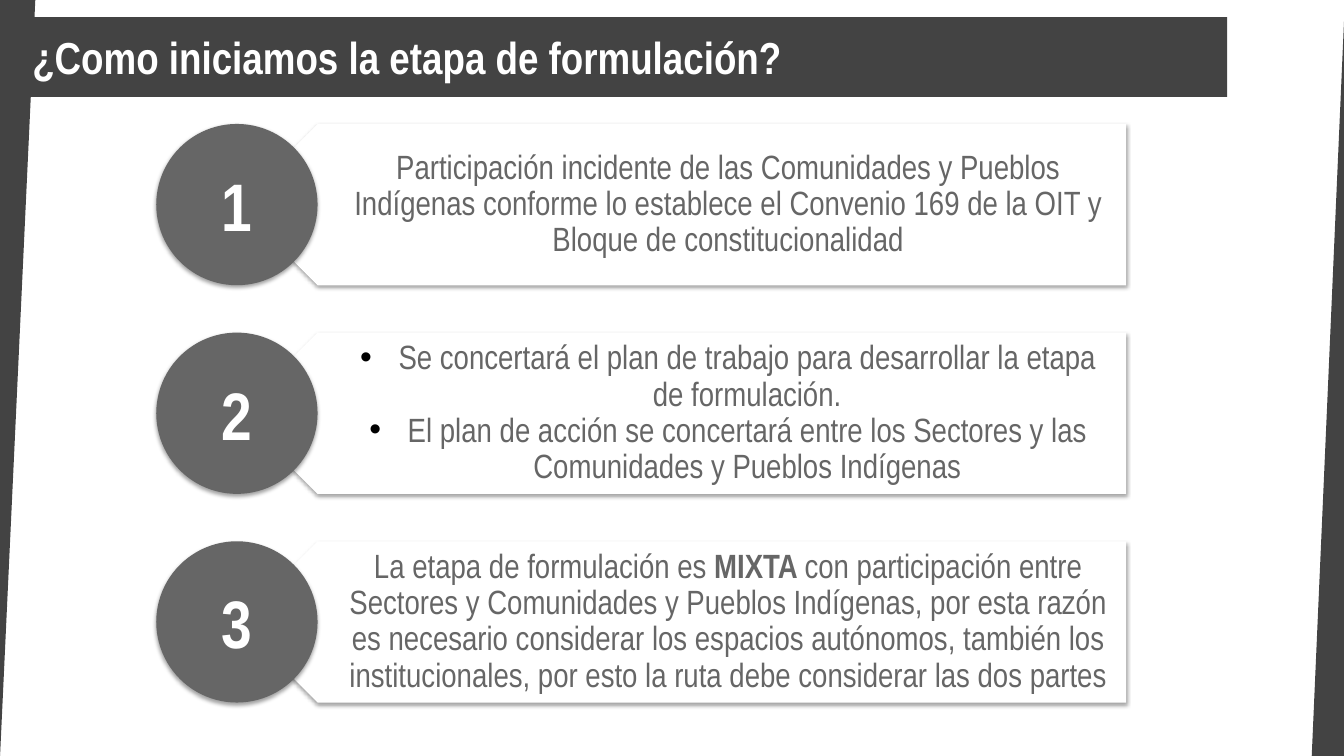
from dataclasses import dataclass

from lxml.etree import SubElement
from pptx import Presentation
from pptx.dml.color import RGBColor
from pptx.enum.shapes import MSO_SHAPE
from pptx.enum.text import MSO_ANCHOR, MSO_AUTO_SIZE, PP_ALIGN
from pptx.oxml.ns import qn
from pptx.util import Inches, Pt


@dataclass(frozen=True)
class Theme:
    font: str = "Arial Narrow"
    dark: RGBColor = RGBColor(0x43, 0x43, 0x43)
    gray: RGBColor = RGBColor(0x66, 0x66, 0x66)
    white: RGBColor = RGBColor(0xFF, 0xFF, 0xFF)
    black: RGBColor = RGBColor(0x00, 0x00, 0x00)
    title_size: int = 32
    number_size: int = 48
    body_size: int = 24


THEME = Theme()
STEP_TOP, STEP_PITCH, STEP_HEIGHT = 1.23, 2.07, 1.6
BULLET_INDENT = 0.38

STEPS = [
    [[("Participación incidente de las Comunidades y Pueblos Indígenas conforme lo "
       "establece el Convenio 169 de la OIT y Bloque de constitucionalidad", False)]],
    [[("Se concertará el plan de trabajo para desarrollar la etapa de formulación.", False)],
     [("El plan de acción se concertará entre los Sectores y las Comunidades y "
       "Pueblos Indígenas", False)]],
    [[("La etapa de formulación es ", False),
      ("MIXTA ", True),
      ("con participación entre Sectores y Comunidades y Pueblos Indígenas, por esta "
       "razón es necesario considerar los espacios autónomos, también los "
       "institucionales, por esto la ruta debe considerar las dos partes", False)]],
]


def place(shape, left, top, width, height):
    shape.left, shape.top = Inches(left), Inches(top)
    shape.width, shape.height = Inches(width), Inches(height)


def set_frame(frame, left, top, right, bottom):
    frame.word_wrap = True
    frame.auto_size = MSO_AUTO_SIZE.NONE
    frame.vertical_anchor = MSO_ANCHOR.MIDDLE
    frame.margin_left, frame.margin_top = Inches(left), Inches(top)
    frame.margin_right, frame.margin_bottom = Inches(right), Inches(bottom)


def add_run(paragraph, text, size, color, bold):
    run = paragraph.add_run()
    run.text = text
    run.font.name = THEME.font
    run.font.size = Pt(size)
    run.font.bold = bold
    run.font.color.rgb = color


def add_solid(slide, kind, box, color, rotation=0):
    solid = slide.shapes.add_shape(kind, *map(Inches, box))
    solid.shadow.inherit = False
    solid.fill.solid()
    solid.fill.fore_color.rgb = color
    solid.line.fill.background()
    solid.rotation = rotation
    return solid


def cast_shadow(shape):
    effects = shape._element.spPr.find(qn("a:effectLst"))
    shadow = SubElement(effects, qn("a:outerShdw"), blurRad=str(Pt(3.1)),
                        dist=str(Pt(1.6)), dir="5400000", rotWithShape="0")
    tint = SubElement(shadow, qn("a:srgbClr"), val=str(THEME.black))
    SubElement(tint, qn("a:alpha"), val="37000")


def add_bullet(paragraph):
    properties = paragraph._p.get_or_add_pPr()
    properties.set("marL", str(Inches(BULLET_INDENT)))
    properties.set("indent", str(-Inches(BULLET_INDENT)))
    bullet_color = SubElement(properties, qn("a:buClr"))
    SubElement(bullet_color, qn("a:srgbClr"), val=str(THEME.black))
    SubElement(properties, qn("a:buFont"), typeface="Arial")
    SubElement(properties, qn("a:buChar"), char="•")


def add_title(slide, text):
    title = slide.shapes.title
    place(title, 0.22, 0.17, 11.95, 0.79)
    title.fill.solid()
    title.fill.fore_color.rgb = THEME.dark
    set_frame(title.text_frame, 0.1, 0.05, 0.1, 0.05)
    heading = title.text_frame.paragraphs[0]
    heading.alignment = PP_ALIGN.LEFT
    add_run(heading, text, THEME.title_size, THEME.white, True)


def add_plate(slide, top):
    plate = add_solid(slide, MSO_SHAPE.PENTAGON, (2.35, top, 8.82, STEP_HEIGHT),
                      THEME.white, 180)
    plate.adjustments[0] = 0.5
    cast_shadow(plate)


def add_number(slide, number, top):
    circle = add_solid(slide, MSO_SHAPE.OVAL, (1.55, top, STEP_HEIGHT, STEP_HEIGHT),
                       THEME.gray)
    cast_shadow(circle)
    set_frame(circle.text_frame, 0.13, 0.13, 0.13, 0.13)
    label = circle.text_frame.paragraphs[0]
    label.alignment = PP_ALIGN.CENTER
    add_run(label, str(number), THEME.number_size, THEME.white, True)


def fill_step(holder, paragraphs, top):
    place(holder, 2.75, top, 8.43, STEP_HEIGHT)
    frame = holder.text_frame
    set_frame(frame, 0.7, 0.1, 0.19, 0.1)
    for index, runs in enumerate(paragraphs):
        paragraph = frame.add_paragraph() if index else frame.paragraphs[0]
        if len(paragraphs) > 1:
            add_bullet(paragraph)
        paragraph.alignment = PP_ALIGN.CENTER
        paragraph.line_spacing = 0.9
        paragraph.space_before = Pt(0)
        for text, bold in runs:
            add_run(paragraph, text, THEME.body_size, THEME.gray, bold)


def add_step(slide, number, paragraphs):
    top = STEP_TOP + (number - 1) * STEP_PITCH
    add_plate(slide, top)
    if len(paragraphs) > 1:
        holder = slide.placeholders[1]
        slide.shapes._spTree.append(holder._element)
    else:
        holder = slide.shapes.add_textbox(0, 0, 0, 0)
    fill_step(holder, paragraphs, top)
    add_number(slide, number, top)


def main():
    deck = Presentation()
    deck.slide_width, deck.slide_height = Inches(13.33), Inches(7.5)
    slide = deck.slides.add_slide(deck.slide_layouts[1])
    add_title(slide, "¿Como iniciamos la etapa de formulación?")
    for number, paragraphs in enumerate(STEPS, 1):
        add_step(slide, number, paragraphs)
    add_solid(slide, MSO_SHAPE.RIGHT_TRIANGLE, (-3.58, 3.58, 7.51, 0.35), THEME.dark, 90)
    add_solid(slide, MSO_SHAPE.RIGHT_TRIANGLE, (9.42, 3.59, 7.51, 0.33), THEME.dark, 270)
    deck.save("out.pptx")


if __name__ == "__main__":
    main()
